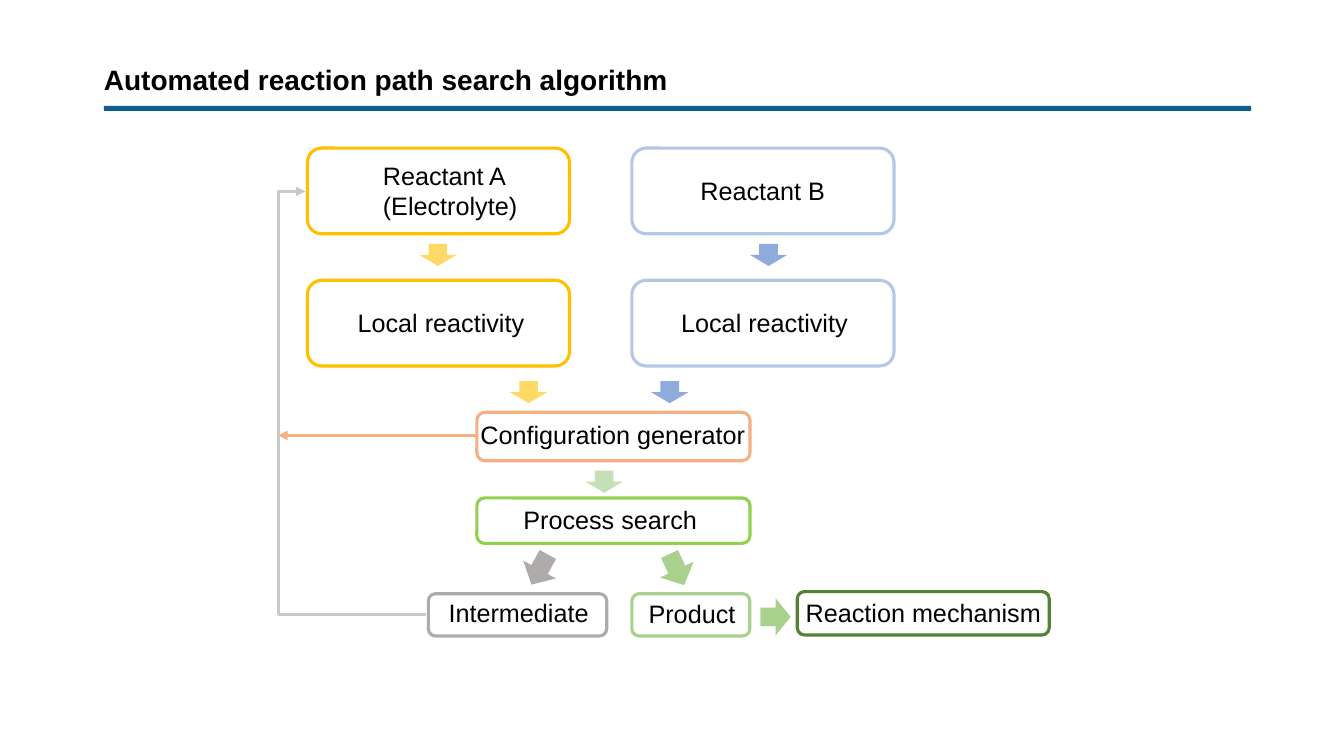
"""Build a slide with a flow chart of an automated reaction path search."""
from lxml import etree
from pptx import Presentation
from pptx.dml.color import RGBColor
from pptx.enum.shapes import MSO_CONNECTOR as CONN, MSO_SHAPE as SHAPE
from pptx.enum.text import MSO_ANCHOR as ANCHOR, PP_ALIGN as ALIGN
from pptx.oxml.ns import qn
from pptx.util import Pt

TITLE = "Automated reaction path search algorithm"
FONT = "Arial"
YELLOW, BLUE, ORANGE, GRAY, GREEN = "FFC000", "B4C7E7", "F4B183", "AFABAB", "A9D18E"
LEFT, RIGHT = 219.6, 451.4
REACTANTS, REACTIVITY = 105.8, 200.2
BIG = (187.2, 61.2)
MIDDLE, MIDDLE_W = 340.6, 195.1
ARROW_W, ARROW_H = 26.6, 15.8
LOOP_X = 198.7

BOXES = [
    (LEFT, REACTANTS, *BIG, YELLOW),
    (RIGHT, REACTANTS, *BIG, BLUE),
    (LEFT, REACTIVITY, *BIG, YELLOW),
    (RIGHT, REACTIVITY, *BIG, BLUE),
    (MIDDLE, 294.5, MIDDLE_W, 34.6, ORANGE),
    (MIDDLE, 355.7, MIDDLE_W, 32.4, "92D050"),
    (306, 424.1, 127.4, 30.2, GRAY),
    (RIGHT, 424.1, 84.2, 30.2, GREEN),
    (569.5, 422.6, 180, 31, "548235"),
]
LABELS = [
    ("Reactant A\n(Electrolyte)", 266.4, 110.9, 111.6, 51.1, ALIGN.LEFT),
    ("Reactant B", 493.2, 121.7, 104.4, 28.8, ALIGN.LEFT),
    ("Local reactivity", 247.7, 216, 134.6, 28.8, ALIGN.CENTER),
    ("Local reactivity", 478.8, 216, 134.6, 28.8, ALIGN.CENTER),
    ("Configuration generator", 331.9, 296, 211.7, 28.8, ALIGN.CENTER),
    ("Process search", 336.2, 356.4, 199.4, 28.8, ALIGN.CENTER),
    ("Intermediate", 308.9, 422.9, 123.1, 28.8, ALIGN.CENTER),
    ("Product", 450.7, 424.1, 87.1, 28.8, ALIGN.CENTER),
    ("Reaction mechanism", 565.9, 422.9, 187.2, 28.8, ALIGN.CENTER),
]
ARROWS = [
    (299.5, 174.2, ARROW_H, 0, "FFD966"),
    (535.7, 174.2, ARROW_H, 0, "8FAADC"),
    (364.3, 272.2, ARROW_H, 0, "FFD966"),
    (465.1, 272.2, ARROW_H, 0, "8FAADC"),
    (418.3, 336.2, ARROW_H, 0, "C5E0B4"),
    (372.2, 394.6, 24.5, 28.5, GRAY),
    (470.2, 394.6, 24.5, 334.8, GREEN),
    (540.7, 429.8, 21.6, 270, GREEN),
]


def rgb(value):
    return RGBColor.from_string(value)


def add_block(slide, kind, x, y, w, h, fill=None, line=None):
    sp = slide.shapes.add_shape(kind, Pt(x), Pt(y), Pt(w), Pt(h))
    sp.shadow.inherit = False
    if fill:
        sp.fill.solid()
        sp.fill.fore_color.rgb = rgb(fill)
    else:
        sp.fill.background()
    if line:
        sp.line.color.rgb = rgb(line)
        sp.line.width = Pt(2.25)
    else:
        sp.line.fill.background()
    return sp


def add_text(slide, text, x, y, w, h, align, size=18, bold=False):
    tf = slide.shapes.add_textbox(Pt(x), Pt(y), Pt(w), Pt(h)).text_frame
    tf.word_wrap = False
    tf.text = text
    for p in tf.paragraphs:
        p.alignment = align
        for r in p.runs:
            r.font.name, r.font.size, r.font.bold = FONT, Pt(size), bold
            r.font.color.rgb = rgb("000000")
    return tf


def add_link(slide, kind, start, end, color):
    link = slide.shapes.add_connector(kind, *map(Pt, start + end))
    link.line.color.rgb = rgb(color)
    link.line.width = Pt(2.25)
    props = link._element.spPr
    etree.SubElement(props.find(qn("a:ln")), qn("a:tailEnd"), type="triangle")
    etree.SubElement(props, qn("a:effectLst"))
    return link


def set_bend(link, start_x, end_x, bend_x):
    share = round((start_x - bend_x) / (start_x - end_x) * 100000)
    geom = link._element.spPr.find(qn("a:prstGeom"))
    guides = geom.find(qn("a:avLst"))
    if guides is None:
        guides = etree.SubElement(geom, qn("a:avLst"))
    etree.SubElement(guides, qn("a:gd"), name="adj1", fmla=f"val {share}")


def main():
    prs = Presentation()
    prs.slide_width, prs.slide_height = Pt(960), Pt(540)
    slide = prs.slides.add_slide(prs.slide_layouts[6])

    add_block(slide, SHAPE.RECTANGLE, 74.2, 75.6, 819.4, 3.6, fill="0C5E8D")
    tf = add_text(slide, TITLE, 74.2, 28.1, 864, 56.9, ALIGN.LEFT, 20, True)
    tf.word_wrap = True
    tf.vertical_anchor = ANCHOR.MIDDLE
    tf.margin_left = tf.margin_right = tf.margin_top = tf.margin_bottom = 0

    for x, y, w, h, color in BOXES:
        add_block(slide, SHAPE.ROUNDED_RECTANGLE, x, y, w, h, line=color)
    for label in LABELS:
        add_text(slide, *label)
    for x, y, h, angle, color in ARROWS:
        sp = add_block(slide, SHAPE.DOWN_ARROW, x, y, ARROW_W, h, fill=color)
        sp.rotation = angle

    start, end = (304.6, 439.2), (218.2, 136.8)
    loop = add_link(slide, CONN.ELBOW, start, end, "C9C9C9")
    set_bend(loop, start[0], end[0], LOOP_X)
    add_link(slide, CONN.STRAIGHT, (MIDDLE, 311), (LOOP_X, 311), ORANGE)

    prs.save("out.pptx")


if __name__ == "__main__":
    main()
